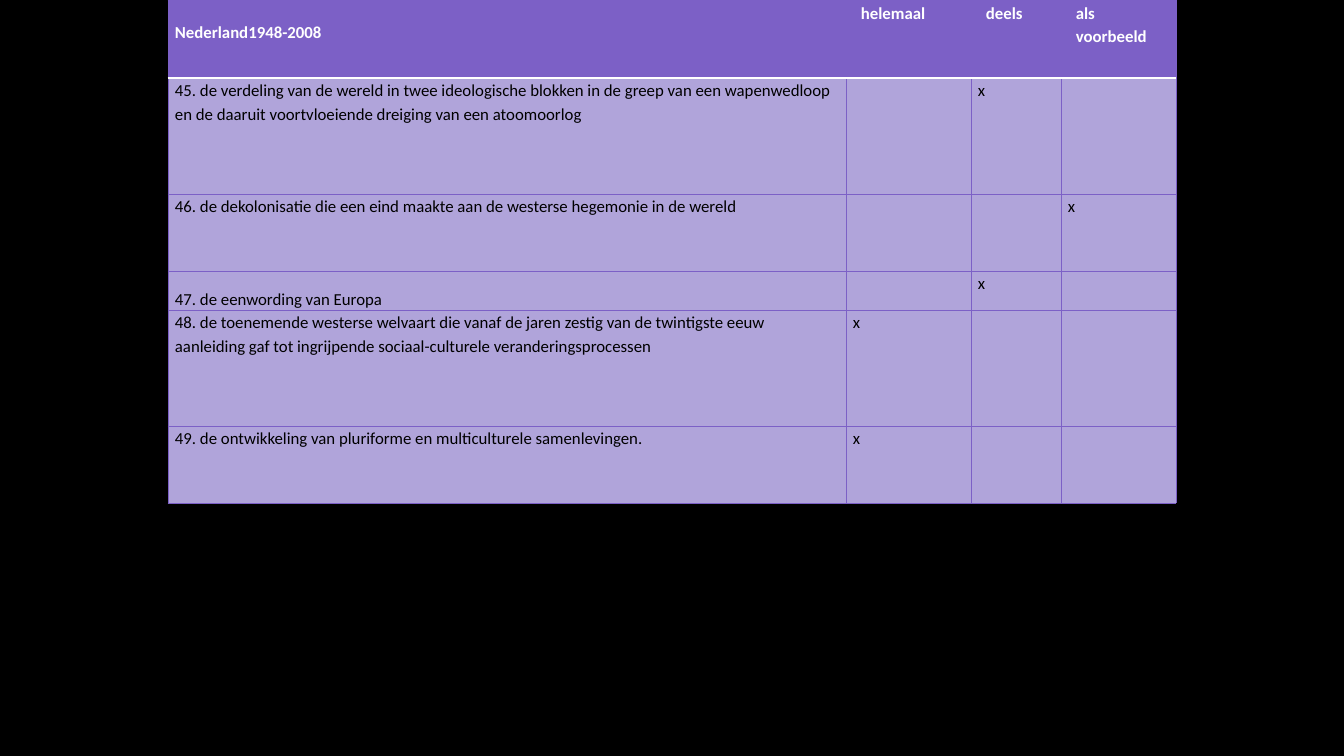
from dataclasses import dataclass

from lxml import etree
from pptx import Presentation
from pptx import util as u
from pptx.dml.color import RGBColor
from pptx.enum import text
from pptx.oxml import ns
from pptx.table import _Cell as Cell

PX_PER_INCH = 100.8


@dataclass(frozen=True)
class Theme:
    background: str = "000000"
    header: str = "7C60C6"
    body: str = "B0A4DA"
    light: str = "FFFFFF"
    dark: str = "000000"
    font: str = "Calibri"
    size: int = 12
    line_spacing: float = 1.15


@dataclass(frozen=True)
class Criterion:
    wording: str
    degree: str
    height: int
    anchor: text.MSO_ANCHOR = text.MSO_ANCHOR.TOP


THEME = Theme()
TITLE = "Nederland1948-2008"
DEGREES = ["helemaal", "deels", "als voorbeeld"]
COLUMN_WIDTHS = [678, 125, 90, 115]
HEADER_HEIGHT = 78
TABLE_LEFT = 168
CELL_MARGIN = 7
HEADER_INDENT = 8
TITLE_DROP = 20
CRITERIA = [
    Criterion("45. de verdeling van de wereld in twee ideologische blokken in de greep van een "
              "wapenwedloop en de daaruit voortvloeiende dreiging van een atoomoorlog",
              "deels", 116),
    Criterion("46. de dekolonisatie die een eind maakte aan de westerse hegemonie in de wereld",
              "als voorbeeld", 77),
    Criterion("47. de eenwording van Europa", "deels", 39, text.MSO_ANCHOR.BOTTOM),
    Criterion("48. de toenemende westerse welvaart die vanaf de jaren zestig van de twintigste "
              "eeuw aanleiding gaf tot ingrijpende sociaal-culturele veranderingsprocessen",
              "helemaal", 116),
    Criterion("49. de ontwikkeling van pluriforme en multiculturele samenlevingen.",
              "helemaal", 77),
]


def px(length: int) -> u.Emu:
    return u.Emu(round(length * u.Inches(1) / PX_PER_INCH))


def set_border(cell: Cell, side: str, color: str, width: float) -> None:
    """Draw one side (L, R, T or B) of a cell; call before the cell is filled."""
    properties = cell._tc.get_or_add_tcPr()
    line = etree.SubElement(properties, ns.qn(f"a:ln{side}"), w=str(u.Pt(width)))
    fill = etree.SubElement(line, ns.qn("a:solidFill"))
    etree.SubElement(fill, ns.qn("a:srgbClr"), val=color)


def format_cell(cell: Cell, wording: str, row: int, column: int) -> None:
    is_header = row == 0
    white_side = {0: "B", 1: "T"}.get(row)
    for side in "LRTB":
        if side == white_side:
            set_border(cell, side, THEME.light, 1)
        else:
            set_border(cell, side, THEME.header, 0.5)
    cell.fill.solid()
    cell.fill.fore_color.rgb = RGBColor.from_string(THEME.header if is_header else THEME.body)

    indent = HEADER_INDENT if is_header and column > 0 else 0
    cell.margin_left = px(CELL_MARGIN + indent)
    cell.margin_right = px(CELL_MARGIN)
    cell.margin_top = px(TITLE_DROP if is_header and column == 0 else 0)
    cell.margin_bottom = 0

    cell.text = wording
    paragraph = cell.text_frame.paragraphs[0]
    paragraph.line_spacing = THEME.line_spacing
    font = paragraph.font
    font.name = THEME.font
    font.size = u.Pt(THEME.size)
    font.bold = is_header
    font.color.rgb = RGBColor.from_string(THEME.light if is_header else THEME.dark)


def main() -> None:
    presentation = Presentation()
    presentation.slide_width = px(1344)
    presentation.slide_height = px(756)
    slide = presentation.slides.add_slide(presentation.slide_layouts[6])
    slide.background.fill.solid()
    slide.background.fill.fore_color.rgb = RGBColor.from_string(THEME.background)

    heights = [HEADER_HEIGHT] + [criterion.height for criterion in CRITERIA]
    rows = [[TITLE, *DEGREES]] + [
        [criterion.wording, *("x" if degree == criterion.degree else "" for degree in DEGREES)]
        for criterion in CRITERIA
    ]
    table = slide.shapes.add_table(
        len(rows), len(COLUMN_WIDTHS), px(TABLE_LEFT), 0,
        px(sum(COLUMN_WIDTHS)), px(sum(heights))).table
    table.horz_banding = False
    for column, width in zip(table.columns, COLUMN_WIDTHS):
        column.width = px(width)
    for row, height in zip(table.rows, heights):
        row.height = px(height)
    for row_index, wordings in enumerate(rows):
        for column_index, wording in enumerate(wordings):
            format_cell(table.cell(row_index, column_index), wording, row_index, column_index)
    for row_index, criterion in enumerate(CRITERIA, start=1):
        table.cell(row_index, 0).vertical_anchor = criterion.anchor

    presentation.save("out.pptx")


if __name__ == "__main__":
    main()
